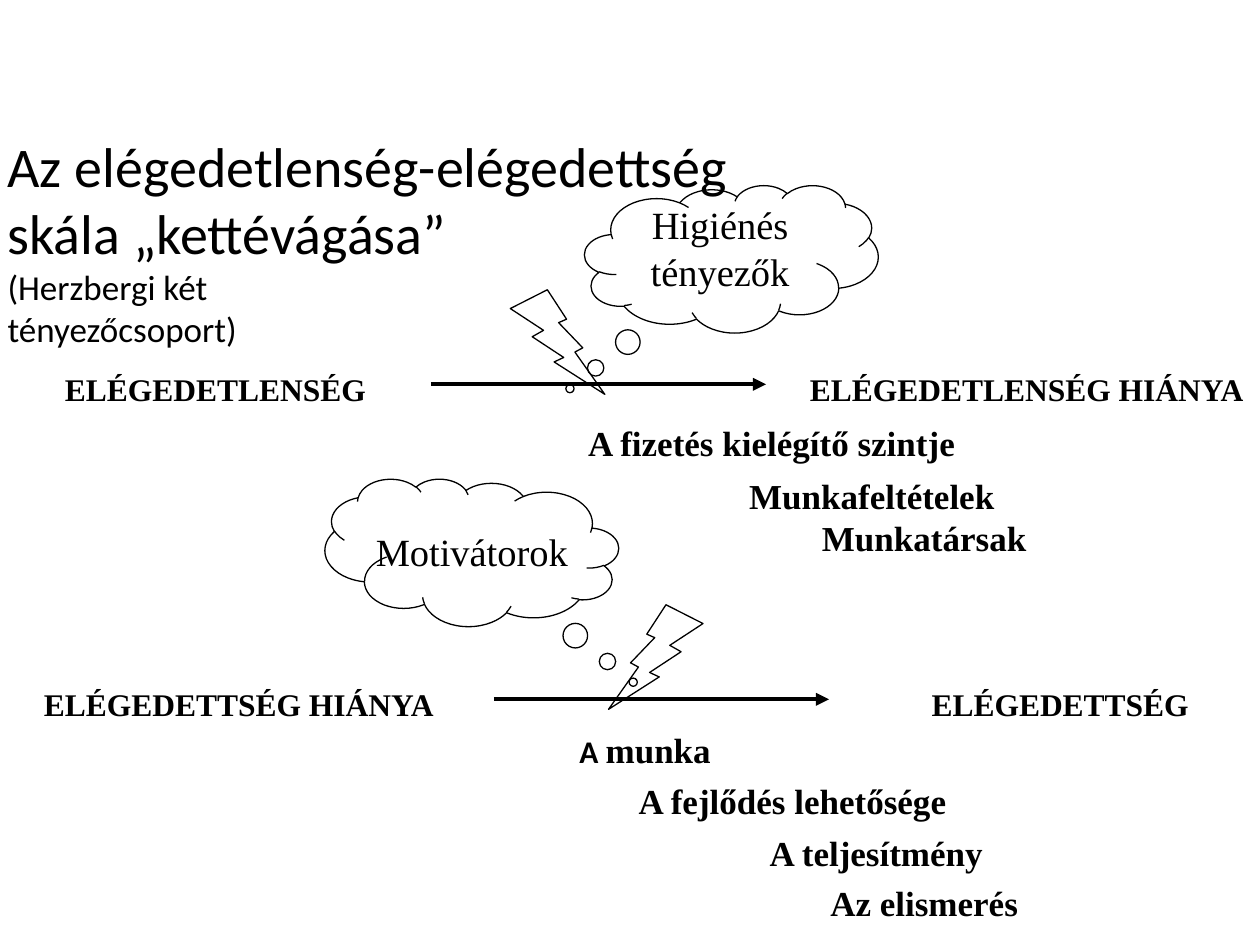
from lxml import etree
from pptx import Presentation
from pptx.dml.color import RGBColor
from pptx.enum.shapes import MSO_CONNECTOR as Connector, MSO_SHAPE as Shape
from pptx.enum.text import MSO_ANCHOR as Anchor, MSO_AUTO_SIZE as AutoSize, PP_ALIGN as Align
from pptx.oxml.ns import qn
from pptx.util import Inches, Pt

COLORS = {"ink": "000000"}
INK = RGBColor.from_string(COLORS["ink"])
SERIF, SANS = "Times New Roman", "Calibri"

TITLE = [
    ("Az elégedetlenség-elégedettség", 32),
    ("skála „kettévágása”", 32),
    ("(Herzbergi két", 20),
    ("tényezőcsoport)", 20),
]
SCALE_ENDS = [
    ("ELÉGEDETLENSÉG", 0.17, 2.89, 3.08, Align.CENTER),
    ("ELÉGEDETLENSÉG HIÁNYA", 6.33, 2.89, 3.67, Align.LEFT),
    ("ELÉGEDETTSÉG HIÁNYA", 0.25, 5.39, 3.42, Align.LEFT),
    ("ELÉGEDETTSÉG", 7.08, 5.39, 2.67, Align.CENTER),
]
SCALE_ARROWS = [(3.42, 3.05), (3.92, 5.55)]
FACTORS = [
    ("A fizetés kielégítő szintje", 4.5, 3.3, 3.25),
    ("Munkafeltételek", 5.17, 3.72, 3.5),
    ("Munkatársak", 5.67, 4.05, 3.33),
    ("A fejlődés lehetősége", 4.75, 6.14, 3.08),
    ("A teljesítmény", 5.33, 6.55, 3.25),
    ("Az elismerés", 5.96, 6.95, 2.75),
]
WORK = [("A ", SANS, 18), ("munka", SERIF, 20)]
CLOUDS = [
    ("Higiénés tényezők", (4.8, 1.55, 0.83), (4.64, 1.47), (4.05, 2.3), False),
    ("Motivátorok", (2.83, 4.14, 0.47), (2.58, 3.8), (4.83, 4.8), True),
]


def style(font, name, size, bold=False):
    font.name, font.size, font.bold = name, Pt(size), bold
    font.color.rgb = INK


def add_text(slide, text, left, top, width, height, size, bold=True, align=Align.CENTER):
    box = slide.shapes.add_textbox(Inches(left), Inches(top), Inches(width), Inches(height))
    box.text_frame.word_wrap = True
    paragraph = box.text_frame.paragraphs[0]
    paragraph.text = text
    paragraph.alignment = align
    style(paragraph.font, SERIF, size, bold)
    return paragraph


def add_outline(slide, preset, left, top, width, height, mirrored):
    outline = slide.shapes.add_shape(
        preset, Inches(left), Inches(top), Inches(width), Inches(height))
    outline.shadow.inherit = False
    outline.fill.background()
    outline.line.color.rgb = INK
    outline.line.width = Pt(0.75)
    if mirrored:
        outline._element.spPr.find(qn("a:xfrm")).set("flipH", "1")
    return outline


def add_arrow(slide, left, y, length=2.66):
    arrow = slide.shapes.add_connector(
        Connector.STRAIGHT, Inches(left), Inches(y), Inches(left + length), Inches(y))
    arrow.line.color.rgb = INK
    arrow.line.width = Pt(2.5)
    etree.SubElement(arrow.line._get_or_add_ln(), qn("a:tailEnd"), type="triangle")
    etree.SubElement(arrow._element.spPr, qn("a:effectLst"))


def set_title(title):
    title.left, title.top = Inches(-0.04), Inches(0.99)
    title.width, title.height = Inches(5.98), Inches(1.85)
    frame = title.text_frame
    frame.text = "\n".join(text for text, _ in TITLE)
    frame.word_wrap = False
    frame.auto_size = AutoSize.NONE
    frame.vertical_anchor = Anchor.TOP
    for paragraph, (_, size) in zip(frame.paragraphs, TITLE):
        paragraph.alignment = Align.LEFT
        style(paragraph.font, SANS, size)


def main():
    deck = Presentation()
    deck.slide_width, deck.slide_height = Inches(10), Inches(7.5)
    slide = deck.slides.add_slide(deck.slide_layouts[5])
    set_title(slide.shapes.title)

    for text, left, top, width, align in SCALE_ENDS:
        add_text(slide, text, left, top, width, 0.4, 18, align=align)
    for left, y in SCALE_ARROWS:
        add_arrow(slide, left, y)

    for text, (left, top, height), cloud_at, bolt_at, mirrored in CLOUDS:
        cloud = add_outline(slide, Shape.CLOUD_CALLOUT, *cloud_at, 2.33, 1.17, mirrored)
        cloud.adjustments[0], cloud.adjustments[1] = -0.55, 0.88
        add_text(slide, text, left, top, 1.83, height, 22, bold=False)
        add_outline(slide, Shape.LIGHTNING_BOLT, *bolt_at, 0.75, 0.83, mirrored)

    for text, left, top, width in FACTORS:
        add_text(slide, text, left, top, width, 0.43, 20)
    work = add_text(slide, "", 3.98, 5.73, 2.28, 0.43, 20)
    for text, name, size in WORK:
        run = work.add_run()
        run.text = text
        style(run.font, name, size, True)

    deck.save("out.pptx")


if __name__ == "__main__":
    main()
